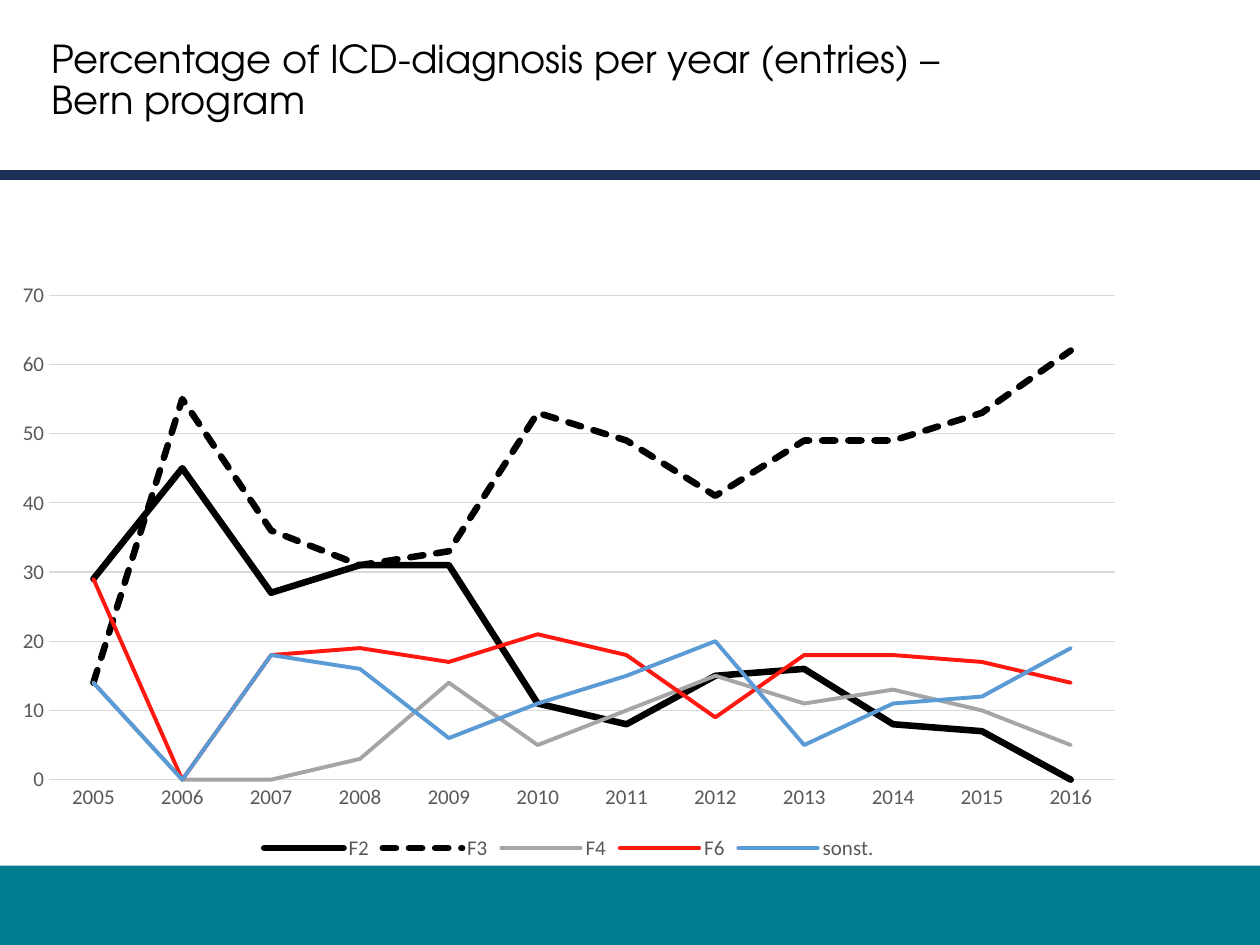
from lxml import etree
from pptx import Presentation
from pptx.chart import data as chart_data
from pptx.dml.color import RGBColor
from pptx.enum import chart as ch, dml, shapes, text
from pptx.oxml import ns
from pptx.util import Cm, Pt

COLORS = {
    "footer": "007B90", "rule": "1D2F54", "black": "000000", "label": "595959",
    "grid": "D9D9D9", "gray": "A5A5A5", "red": "FF1810", "blue": "5B9BD5",
}
YEARS = [str(year) for year in range(2005, 2017)]
# name, colour, line width, dash, percentages per year
DIAGNOSES = [
    ("F2", "black", 3.75, None, (29, 45, 27, 31, 31, 11, 8, 15, 16, 8, 7, 0)),
    ("F3", "black", 3.75, dml.MSO_LINE.SQUARE_DOT,
     (14, 55, 36, 31, 33, 53, 49, 41, 49, 49, 53, 62)),
    ("F4", "gray", 2.25, None, (14, 0, 0, 3, 14, 5, 10, 15, 11, 13, 10, 5)),
    ("F6", "red", 2.25, None, (29, 0, 18, 19, 17, 21, 18, 9, 18, 18, 17, 14)),
    ("sonst.", "blue", 2.25, None, (14, 0, 18, 16, 6, 11, 15, 20, 5, 11, 12, 19)),
]


def rgb(name):
    return RGBColor.from_string(COLORS[name])


def style_font(font, size, color, face):
    font.size = Pt(size)
    font.name = face
    font.color.rgb = rgb(color)


def style_line(line, color, width):
    line.color.rgb = rgb(color)
    line.width = Pt(width)


def add_band(slide, left, top, width, height, color):
    band = slide.shapes.add_shape(
        shapes.MSO_SHAPE.RECTANGLE, Cm(left), Cm(top), Cm(width), Cm(height))
    band.shadow.inherit = False
    band.fill.solid()
    band.fill.fore_color.rgb = rgb(color)
    band.line.fill.background()


def add_rule(slide, start, end, y, color, width):
    rule = slide.shapes.add_connector(
        shapes.MSO_CONNECTOR.STRAIGHT, Cm(start), Cm(y), Cm(end), Cm(y))
    style_line(rule.line, color, width)
    etree.SubElement(rule._element.spPr, ns.qn("a:effectLst"))


def add_text(slide, words, left, top, width, height, *, size, color, face, spacing):
    box = slide.shapes.add_textbox(Cm(left), Cm(top), Cm(width), Cm(height))
    frame = box.text_frame
    frame.word_wrap = True
    frame.vertical_anchor = text.MSO_ANCHOR.MIDDLE
    paragraph = frame.paragraphs[0]
    paragraph.line_spacing = spacing
    run = paragraph.add_run()
    run.text = words
    style_font(run.font, size, color, face)


def style_axes(chart):
    for axis in (chart.category_axis, chart.value_axis):
        axis.major_tick_mark = axis.minor_tick_mark = ch.XL_TICK_MARK.NONE
        style_font(axis.tick_labels.font, 12, "label", "Calibri")
    style_line(chart.category_axis.format.line, "grid", 0.75)
    values = chart.value_axis
    values.minimum_scale, values.maximum_scale, values.major_unit = 0, 70, 10
    values.format.line.fill.background()
    style_line(values.major_gridlines.format.line, "grid", 0.75)


def style_series(series, color, width, dash):
    series.smooth = False
    style_line(series.format.line, color, width)
    if dash:
        series.format.line.dash_style = dash
    series._element.find(".//" + ns.qn("a:ln")).set("cap", "rnd")


def add_diagnosis_chart(slide, left, top, width, height):
    data = chart_data.CategoryChartData()
    data.categories = YEARS
    for name, _, _, _, shares in DIAGNOSES:
        data.add_series(name, shares)
    chart = slide.shapes.add_chart(
        ch.XL_CHART_TYPE.LINE, Cm(left), Cm(top), Cm(width), Cm(height), data).chart
    style_font(chart.font, 10, "black", "Calibri")
    chart.has_title = False
    chart.has_legend = True
    chart.legend.position = ch.XL_LEGEND_POSITION.BOTTOM
    chart.legend.include_in_layout = False
    style_font(chart.legend.font, 12, "label", "Calibri")
    style_axes(chart)
    plot = chart.plots[0]
    plot.vary_by_categories = False
    for series, (_, color, width_pt, dash, _) in zip(plot.series, DIAGNOSES):
        style_series(series, color, width_pt, dash)


def main():
    deck = Presentation()
    deck.slide_width, deck.slide_height = Cm(25.4), Cm(19.05)
    slide = deck.slides.add_slide(deck.slide_layouts[6])
    add_band(slide, 0, 17.45, 25.4, 1.6, "footer")
    add_rule(slide, 25.8, -1.5, 3.53, "rule", 6)
    add_text(slide, "Percentage of ICD-diagnosis per year (entries) – Bern program",
             0.79, 0.58, 19.05, 2.13,
             size=22, color="black", face="TeX Gyre Adventor", spacing=0.9)
    add_diagnosis_chart(slide, 0, 5.46, 22.94, 11.99)
    deck.save("out.pptx")


if __name__ == "__main__":
    main()
